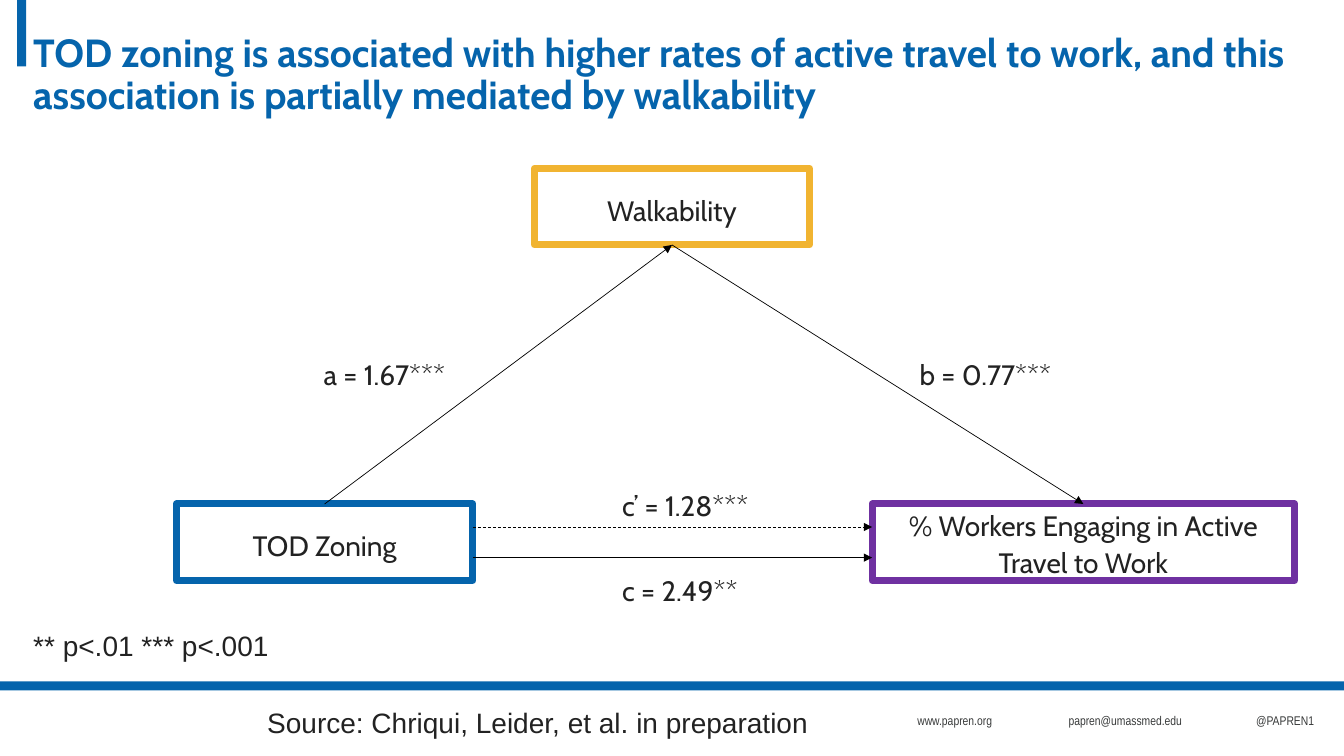
"""Build a slide with a mediation diagram of zoning, walkability and active travel."""
from lxml import etree
from pptx import Presentation, util as u
from pptx.dml.color import RGBColor
from pptx.enum import dml, shapes, text
from pptx.oxml.ns import qn

BLUE = RGBColor(0x05, 0x64, 0xAC)
GOLD = RGBColor(0xF1, 0xB4, 0x31)
PURPLE = RGBColor(0x6F, 0x31, 0xA1)
INK = RGBColor(0x22, 0x22, 0x22)
GREY = RGBColor(0x38, 0x3A, 0x3A)
BLACK = RGBColor(0, 0, 0)
WHITE = RGBColor(0xFF, 0xFF, 0xFF)

WIDTH, HEIGHT = 13.33, 7.5
MARGIN = 0.33
BOX_HEIGHT = 0.76
TOP_ROW, LABEL_ROW, BOTTOM_ROW = 1.67, 3.48, 5
LABEL_SIZE = (1.45, 0.41)

TITLE = ("TOD zoning is associated with higher rates of active travel to work, "
         "and this association is partially mediated by walkability")
BARS = [(0, 6.76, WIDTH, 0.09), (0.17, 0, 0.09, 0.66)]
CONTACTS = [("www.papren.org", 9, 0.96), ("papren@umassmed.edu", 10.5, 1.34),
            ("@PAPREN1", 12.36, 0.79)]
BOXES = {
    "zoning": ("TOD Zoning", 1.75, BOTTOM_ROW, 2.94, BLUE, 1.2),
    "walkability": ("Walkability", 5.3, TOP_ROW, 2.73, GOLD, 1.2),
    "travel": ("% Workers Engaging in Active Travel to Work",
               8.65, BOTTOM_ROW, 4.19, PURPLE, 1.1),
}
LABELS = [("a = 1.67***", 3.21, LABEL_ROW), ("b = 0.77***", 9.12, LABEL_ROW),
          ("c’ = 1.28***", 6.17, 4.78), ("c = 2.49**", 6.17, 5.62)]
NOTES = [("** p<.01 *** p<.001", MARGIN, 6.17, 2.7),
         ("Source: Chriqui, Leider, et al. in preparation", 2.65, 6.93, 5.8)]
DIRECT_PATHS = [(0.3, True), (0.7, False)]


def inches(*lengths):
    return [u.Inches(length) for length in lengths]


def write(shape, words, size=20, font="Cabin", color=INK, bold=False, spacing=1.2,
          align=text.PP_ALIGN.LEFT, anchor=text.MSO_ANCHOR.TOP, wrap=True, inset=0):
    frame = shape.text_frame
    frame.word_wrap = wrap
    frame.vertical_anchor = anchor
    frame.margin_left = frame.margin_right = u.Inches(inset)
    frame.margin_top = frame.margin_bottom = u.Inches(inset / 2)
    paragraph = frame.paragraphs[0]
    paragraph.alignment = align
    paragraph.line_spacing = spacing
    run = paragraph.add_run()
    run.text = words
    run.font.size = u.Pt(size)
    run.font.name = font
    run.font.bold = bold
    run.font.color.rgb = color


def add_text(slide, words, place, **formatting):
    textbox = slide.shapes.add_textbox(*inches(*place))
    write(textbox, words, **formatting)
    return textbox


def add_rectangle(slide, place, fill, outline=None):
    shape = slide.shapes.add_shape(shapes.MSO_SHAPE.RECTANGLE, *inches(*place))
    shape.shadow.inherit = False
    shape.fill.solid()
    shape.fill.fore_color.rgb = fill
    if outline is None:
        shape.line.fill.background()
    else:
        shape.line.color.rgb = outline
        shape.line.width = u.Pt(5)
        etree.SubElement(shape.line._get_or_add_ln(), qn("a:round"))
    return shape


def add_arrow(slide, start, end, dashed=False):
    arrow = slide.shapes.add_connector(
        shapes.MSO_CONNECTOR.STRAIGHT, *inches(*start, *end))
    arrow.line.color.rgb = BLACK
    arrow.line.width = u.Pt(0.5)
    if dashed:
        arrow.line.dash_style = dml.MSO_LINE.DASH
    etree.SubElement(arrow.line._get_or_add_ln(), qn("a:tailEnd"), type="triangle")
    etree.SubElement(arrow._element.spPr, qn("a:effectLst"))


def add_diagram(slide):
    for words, left, top, width, color, spacing in BOXES.values():
        box = add_rectangle(slide, (left, top, width, BOX_HEIGHT), WHITE, color)
        write(box, words, spacing=spacing,
              align=text.PP_ALIGN.CENTER, anchor=text.MSO_ANCHOR.MIDDLE)

    middle = {name: box[1] + box[3] / 2 for name, box in BOXES.items()}
    peak = (middle["walkability"], TOP_ROW + BOX_HEIGHT)
    add_arrow(slide, (middle["zoning"], BOTTOM_ROW), peak)
    add_arrow(slide, peak, (middle["travel"], BOTTOM_ROW))

    zoning_right = BOXES["zoning"][1] + BOXES["zoning"][3]
    travel_left = BOXES["travel"][1]
    for share, dashed in DIRECT_PATHS:
        y = BOTTOM_ROW + share * BOX_HEIGHT
        add_arrow(slide, (zoning_right, y), (travel_left, y), dashed)

    for words, left, top in LABELS:
        add_text(slide, words, (left, top, *LABEL_SIZE))


def main():
    presentation = Presentation()
    presentation.slide_width, presentation.slide_height = inches(WIDTH, HEIGHT)
    slide = presentation.slides.add_slide(presentation.slide_layouts[6])

    for place in BARS:
        add_rectangle(slide, place, BLUE)
    for words, left, width in CONTACTS:
        contact = add_text(slide, words, (left, 7.02, width, 0.25), size=9, wrap=False,
                           font="Arial Narrow", color=GREY, spacing=1, inset=0.1)
        contact.text_frame.auto_size = text.MSO_AUTO_SIZE.SHAPE_TO_FIT_TEXT
    add_text(slide, TITLE, (MARGIN, MARGIN, WIDTH - 2 * MARGIN, 0.85),
             size=28, color=BLUE, bold=True, spacing=0.9)
    add_diagram(slide)
    for words, left, top, width in NOTES:
        add_text(slide, words, (left, top, width, 0.41), font="Arial")

    presentation.save("out.pptx")


if __name__ == "__main__":
    main()
